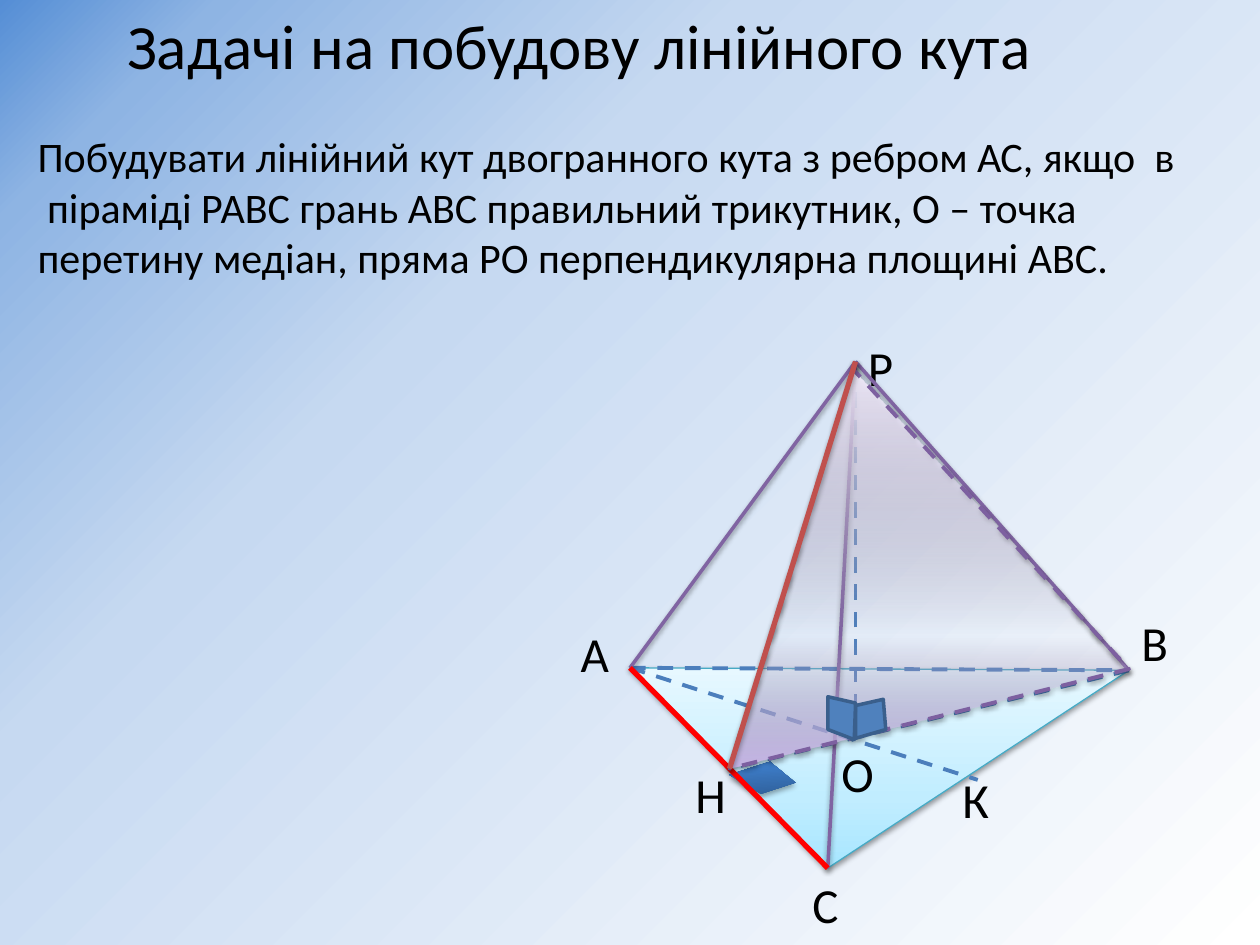
import pptx
import pptx.util
import pptx.dml.color
import pptx.enum.dml
import pptx.enum.shapes
import pptx.enum.text
import pptx.oxml.ns
from lxml import etree

Inches, Pt, qn = pptx.util.Inches, pptx.util.Pt, pptx.oxml.ns.qn
BLUE, PLUM, RED = "4B7EBC", "8064A2", "C0504D"
SOFT, DEEP = (38, 3.1, 1.6), (35, 3.1, 1.8)  # opacity, blur, distance

# Corners of the pyramid, in inches from the corner of the figure
SPOTS = {
    "P": (1.79, 0), "A": (0, 2.43), "B": (3.96, 2.45), "C": (1.57, 4.02),
    "H": (0.79, 3.23), "O": (1.79, 2.98), "K": (2.76, 3.32),
}


def color(code):
    return pptx.dml.color.RGBColor.from_string(code)


def node(root, tag, **attrs):
    item = etree.SubElement(root, qn("a:" + tag))
    for key, val in attrs.items():
        item.set(key, str(val))
    return item


def tint(root, code, alpha=100):
    item = node(root, "srgbClr", val=code)
    if alpha < 100:
        node(item, "alpha", val=alpha * 1000)


def blend(fill, root, stops, angle=None):
    """Gradient of (place, colour, opacity); round from top left without an angle."""
    fill.gradient()
    grad = root.find(".//" + qn("a:gradFill"))
    for item in list(grad):
        grad.remove(item)
    band = node(grad, "gsLst")
    for place, *paint in stops:
        tint(node(band, "gs", pos=place * 1000), *paint)
    if angle is None:
        way = node(grad, "path", path="circle")
        node(way, "fillToRect", r=100000, b=100000)
    else:
        node(grad, "lin", ang=angle * 60000, scaled=0)


def shade(part, glow):
    """Shadow straight below, or none."""
    props = part._element.spPr
    old = props.find(qn("a:effectLst"))
    if old is not None:
        props.remove(old)
    effect = node(props, "effectLst")
    if glow:
        alpha, blur, dist = glow
        drop = node(effect, "outerShdw", blurRad=Pt(blur), dist=Pt(dist),
                    dir=90 * 60000, rotWithShape=0)
        tint(drop, "000000", alpha)


def pen(line, code, width, dash=False):
    line.color.rgb = color(code)
    line.width = Pt(width)
    if dash:
        line.dash_style = pptx.enum.dml.MSO_LINE.DASH


def text(slide, words, box, size=28):
    frame = slide.shapes.add_textbox(*map(Inches, box)).text_frame
    frame.word_wrap = False
    frame.auto_size = pptx.enum.text.MSO_AUTO_SIZE.SHAPE_TO_FIT_TEXT
    frame.text = words
    for para in frame.paragraphs:
        para.font.size = Pt(size)
        para.font.name = "Calibri"
        para.font.color.rgb = color("000000")


def edge(slide, box, start, end, code, width, dash=False, glow=None):
    ends = [Inches(base + step) for spot in (start, end) for base, step in zip(box, spot)]
    line = slide.shapes.add_connector(pptx.enum.shapes.MSO_CONNECTOR.STRAIGHT, *ends)
    pen(line.line, code, width, dash)
    shade(line, glow)


def face(slide, box, spots, fill, line=None, glow=None):
    dots = [(Inches(box[0] + x), Inches(box[1] + y)) for x, y in spots]
    build = slide.shapes.build_freeform(*dots[0])
    build.add_line_segments(dots[1:], close=True)
    shape = build.convert_to_shape()
    if isinstance(fill, str):
        shape.fill.solid()
        shape.fill.fore_color.rgb = color(fill)
    else:
        blend(shape.fill, shape._element.spPr, fill, 270)
    if line:
        pen(shape.line, *line)
    else:
        shape.line.fill.background()
    shade(shape, glow)
    return shape


def base(slide, box):
    spots = [SPOTS[name] for name in "ABC"]
    face(slide, box, spots, [(0, "A7E6FF"), (35, "C1EDFF"), (100, "E7F8FF")],
         ("46AAC5", 0.75), SOFT)
    # Hidden edge, medians and height
    for start, end in ("AB", "AK", "BH", "OP"):
        edge(slide, box, SPOTS[start], SPOTS[end], BLUE, 2.25, dash=True)


def names(slide, box):
    marks = {"А": (-0.49, 2.03), "В": (3.96, 1.94), "С": (1.35, 4.02), "К": (2.54, 3.19),
             "Н": (0.42, 3.15), "О": (1.58, 2.98), "Р": (1.79, -0.24)}
    for name, (x, y) in marks.items():
        text(slide, name, (box[0] + x, box[1] + y, 0.43, 0.57))


def sides(slide, box):
    for name in "BCA":
        edge(slide, box, SPOTS["P"], SPOTS[name], PLUM, 2, glow=SOFT)
    # Right angle at H, then the edge of the dihedral angle
    mark = face(slide, box, [(0.79, 3.26), (1.12, 3.18), (1.31, 3.36), (1.03, 3.43)],
                [(0, "2F5F99"), (80, "3D7CC7"), (100, "3A7CCB")], glow=DEEP)
    mark.rotation = 355.9
    edge(slide, box, SPOTS["A"], SPOTS["C"], "FF0000", 3)


def section(slide, box):
    spots = [SPOTS["P"], SPOTS["H"], (3.96, 2.44), (1.77, 0.06)]
    face(slide, box, spots, [(0, "C9B5E8", 95), (33, "D8CBEE", 0), (100, "F0EAF9")],
         ("7D60A0", 2.25, True), SOFT)
    edge(slide, box, SPOTS["P"], SPOTS["H"], RED, 3, glow=DEEP)
    # Right angles at O
    for spots in ([(1.79, 2.99), (1.79, 2.73), (2.01, 2.68), (2.03, 2.92)],
                  [(1.78, 3), (1.57, 2.92), (1.57, 2.66), (1.79, 2.71)]):
        face(slide, box, spots, "4F81BD", ("3A5F8C", 2))


def figure(slide, box):
    for draw in (base, names, sides, section):
        draw(slide, box)


def main():
    deck = pptx.Presentation()
    deck.slide_width, deck.slide_height = Inches(10), Inches(7.5)
    slide = deck.slides.add_slide(deck.slide_layouts[6])
    blend(slide.background.fill, slide._element,
          [(0, "558ED5"), (10, "8EB4E3"), (34, "C6D9F1"), (100, "FFFFFF")])
    text(slide, "Побудувати лінійний кут двогранного кута з ребром АС, якщо  в\n"
                " піраміді РАВС грань АВС правильний трикутник, О – точка\n"
                "перетину медіан, пряма РО перпендикулярна площині АВС.",
         (0.2, 0.99, 9.63, 1.31), size=24)
    figure(slide, (5, 2.87))
    text(slide, "Задачі на побудову лінійного кута", (0.91, 0, 7.45, 0.71), size=36)
    deck.save("out.pptx")


if __name__ == "__main__":
    main()
